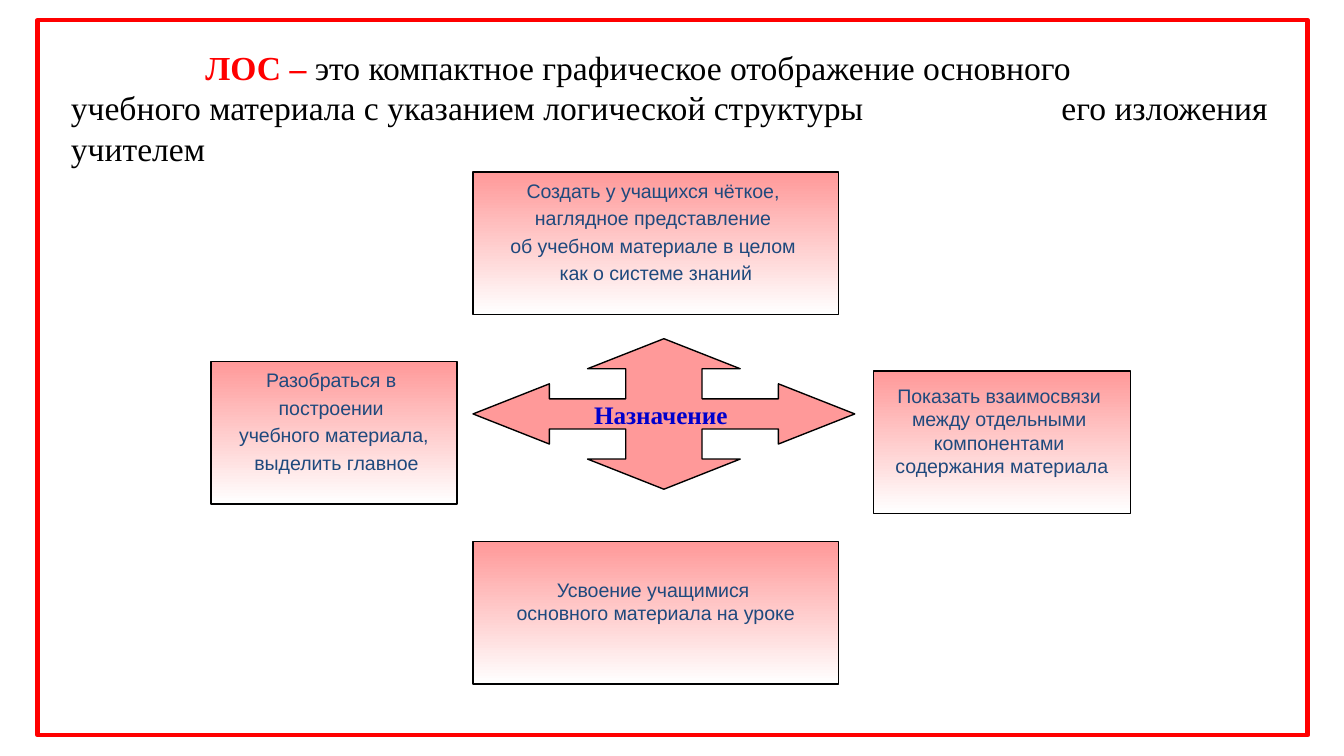
from pptx import Presentation
from pptx.dml.color import RGBColor
from pptx.enum import shapes, text
from pptx.oxml.ns import qn
from pptx.util import Inches, Pt
from lxml import etree

FRAME = (0.28, 0.15, 9.45, 5.32)
HEADING_BOX = (0.43, 0.3, 9.13, 1.26)
HEADING_TABS = (1, 7.37)
TERM = "\tЛОС – "
DEFINITION = ("это компактное графическое отображение основного\v"
              "учебного материала с указанием логической структуры\t"
              "его изложения учителем")
CENTER_LABEL = "Назначение "
ARROW_CENTER = (4.94, 3.08)
ARROW_HALF = (1.42, 0.56)
ARROW_QUARTER = [(0, -1), (-0.4, -0.6), (-0.2, -0.6),
                 (-0.2, -0.2), (-0.6, -0.2), (-0.6, -0.4)]
BOX_HEIGHT = 1.06
PURPOSES = [
    (3.52, 1.28, 2.72, 2.1, ["Создать у учащихся чёткое, ", "наглядное представление ",
                             "об учебном материале в целом ", "как о системе знаний"]),
    (6.5, 2.76, 1.91, 0, ["Показать взаимосвязи ", "между отдельными ",
                          "компонентами ", "содержания материала"]),
    (3.52, 4.03, 2.72, 0, ["Усвоение учащимися ", "основного материала на уроке"]),
    (1.57, 2.69, 1.83, 2.1, ["Разобраться в ", "построении ",
                             "учебного материала,", " выделить главное"]),
]


def color(value):
    return RGBColor.from_string(value)


def write(p, content, size=10.5, font="Arial", fill="1F497D", bold=False,
          align=text.PP_ALIGN.CENTER, before=0):
    p.alignment = align
    p.space_before = Pt(before)
    for i, part in enumerate(content.split("\v")):
        if i:
            p.add_line_break()
        r = p.add_run()
        r.text = part
        r.font.size = Pt(size)
        r.font.name = font
        r.font.bold = bold
        r.font.color.rgb = color(fill)


def outline(sp, line, width):
    sp.shadow.inherit = False
    sp.line.color.rgb = color(line)
    sp.line.width = Pt(width)


def add_rect(s, box):
    return s.shapes.add_shape(shapes.MSO_SHAPE.RECTANGLE, *map(Inches, box))


def add_heading(s):
    tf = s.shapes.add_textbox(*map(Inches, HEADING_BOX)).text_frame
    tf.word_wrap = True
    p = tf.paragraphs[0]
    style = dict(size=18, font="Times New Roman", align=text.PP_ALIGN.LEFT)
    write(p, TERM, fill="FF0000", bold=True, **style)
    write(p, DEFINITION, fill="000000", **style)
    tabs = etree.SubElement(p._p.get_or_add_pPr(), qn("a:tabLst"))
    for pos in HEADING_TABS:
        etree.SubElement(tabs, qn("a:tab"), pos=str(Inches(pos)), algn="l")


def add_arrow(s):
    points, quarter = [], ARROW_QUARTER
    for _ in range(4):
        points += quarter
        quarter = [(y, -x) for x, y in quarter]
    (cx, cy), (hx, hy) = ARROW_CENTER, ARROW_HALF
    points = [(Inches(cx + x * hx), Inches(cy + y * hy)) for x, y in points]
    builder = s.shapes.build_freeform(*points[0])
    builder.add_line_segments(points[1:], close=True)
    sp = builder.convert_to_shape()
    sp.fill.solid()
    sp.fill.fore_color.rgb = color("FF9999")
    outline(sp, "000000", 0.75)
    tf = sp.text_frame
    tf.word_wrap = False
    tf.vertical_anchor = text.MSO_ANCHOR.MIDDLE
    write(tf.paragraphs[0], CENTER_LABEL, size=13.5, font="Times New Roman",
          fill="0000CC", bold=True)


def add_purpose(s, left, top, width, before, lines):
    sp = add_rect(s, (left, top, width, BOX_HEIGHT))
    sp.fill.gradient()
    sp.fill.gradient_angle = 270
    for stop, value in zip(sp.fill.gradient_stops, ("FF9999", "FFFFFF")):
        stop.color.rgb = color(value)
    outline(sp, "000000", 0.75)
    tf = sp.text_frame
    tf.word_wrap = False
    tf.vertical_anchor = text.MSO_ANCHOR.MIDDLE
    tf.margin_bottom = Inches(0.22)
    for i, line in enumerate(lines):
        p = tf.add_paragraph() if i else tf.paragraphs[0]
        write(p, line, before=before)


def main():
    prs = Presentation()
    prs.slide_width = Inches(10)
    prs.slide_height = prs.slide_width * 9 // 16
    s = prs.slides.add_slide(prs.slide_layouts[6])
    frame = add_rect(s, FRAME)
    frame.fill.background()
    outline(frame, "FF0000", 2.5)
    add_heading(s)
    add_arrow(s)
    for purpose in PURPOSES:
        add_purpose(s, *purpose)
    prs.save("out.pptx")


if __name__ == "__main__":
    main()
